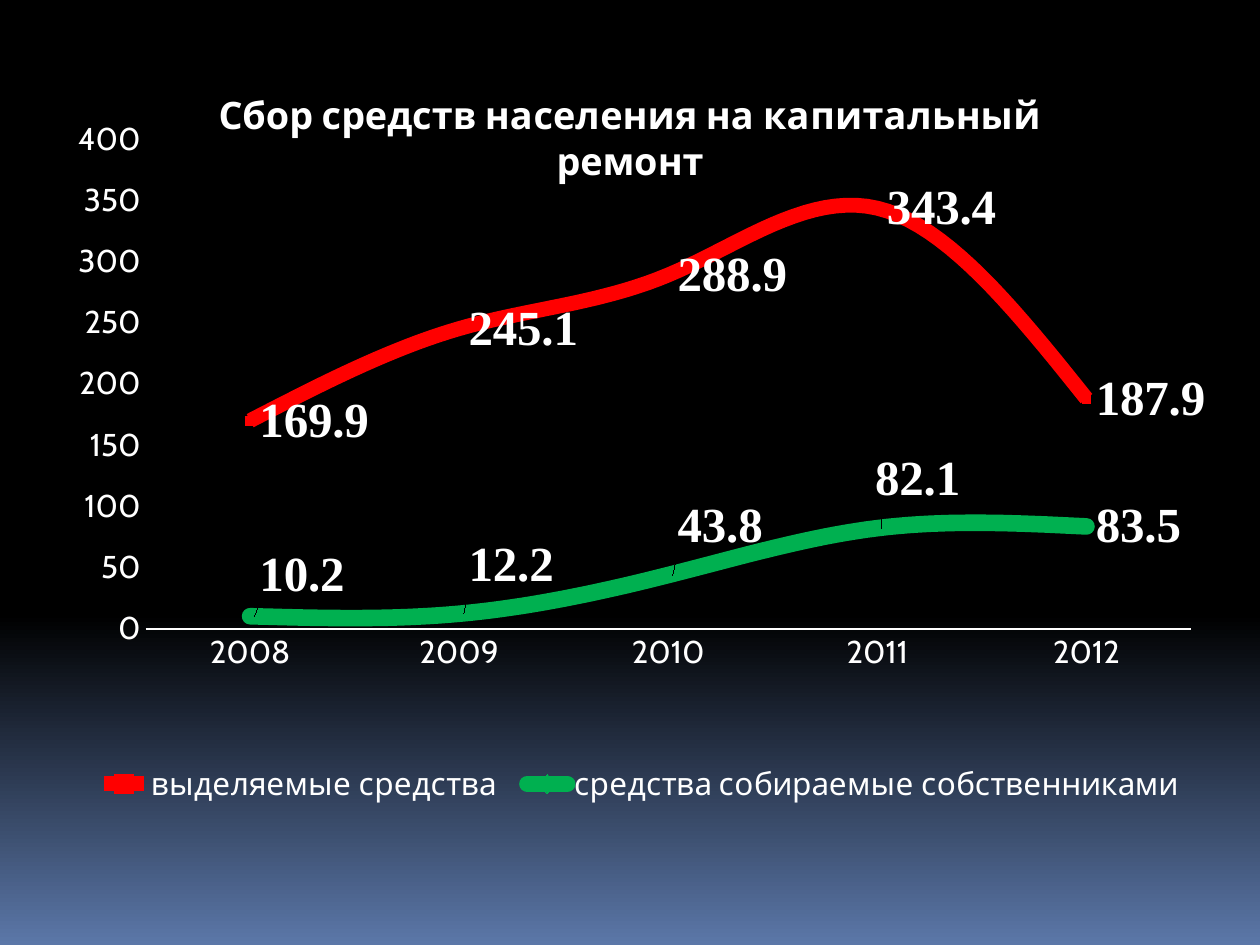
from dataclasses import dataclass

from lxml.etree import SubElement
from pptx import Presentation
from pptx.chart.data import CategoryChartData as ChartData
from pptx.dml.color import RGBColor as Rgb
from pptx.enum.chart import XL_CHART_TYPE as Kind
from pptx.enum.chart import XL_LABEL_POSITION as Side
from pptx.enum.chart import XL_LEGEND_POSITION as Place
from pptx.enum.chart import XL_TICK_MARK as Tick
from pptx.oxml.ns import qn
from pptx.util import Inches, Pt

COLORS = {
    "black": "000000",
    "blue": "5B77A8",
    "white": "FFFFFF",
    "red": "FF0000",
    "green": "00B050",
}
YEARS = ["2008", "2009", "2010", "2011", "2012"]
TITLE = "Сбор средств населения на капитальный ремонт"


@dataclass
class Fund:
    name: str
    values: tuple[float, ...]
    color: str
    width: float
    cap: str
    shifts: tuple[tuple[float, float], ...] = ()


FUNDS = [
    Fund("выделяемые средства", (169.9, 245.1, 288.9, 343.4, 187.9),
         "red", 8.5, "flat"),
    Fund("средства собираемые собственниками", (10.2, 12.2, 43.8, 82.1, 83.5),
         "green", 9.5, "rnd",
         ((0, -0.05), (0, -0.06), (0, -0.06), (-0.01, -0.06))),
]


def color(name: str) -> Rgb:
    return Rgb.from_string(COLORS[name])


def style(font, size: float = 18, bold: bool = False, name: str = "Cabin") -> None:
    font.size = Pt(size)
    font.bold = bold
    font.name = name
    font.color.rgb = color("white")


def add_title(frame, text: str, **form) -> None:
    run = frame.paragraphs[0].add_run()
    run.text = text
    style(run.font, **form)


def move(owner, after: str, **sizes: float) -> None:
    """Give a chart part a manual layout, in fractions of the chart."""
    for old in owner.findall(qn("c:layout")):
        owner.remove(old)
    layout = SubElement(owner, qn("c:layout"))
    manual = SubElement(layout, qn("c:manualLayout"))
    if after == "":
        owner.insert(0, layout)
        SubElement(manual, qn("c:layoutTarget")).set("val", "inner")
    else:
        owner.find(qn(after)).addnext(layout)
    if after != "c:idx":
        for axis in "xy":
            SubElement(manual, qn(f"c:{axis}Mode")).set("val", "edge")
    for key, value in sizes.items():
        SubElement(manual, qn(f"c:{key}")).set("val", str(value))


def style_line(line, fund: Fund) -> None:
    line.smooth = True
    line.marker.style = None
    line.format.line.color.rgb = color(fund.color)
    line.format.line.width = Pt(fund.width)
    line.format.line._get_or_add_ln().set("cap", fund.cap)
    form = {"size": 28, "bold": True, "name": "Times New Roman"}
    labels = line.data_labels
    labels.show_value = True
    labels.position = Side.RIGHT
    style(labels.font, **form)
    for i, (x, y) in enumerate(fund.shifts):
        label = line.points[i].data_label
        label.position = Side.RIGHT
        style(label.font, **form)
        spot = labels._element.xpath(f"c:dLbl[c:idx/@val='{i}']")[0]
        move(spot, "c:idx", x=x, y=y)


def add_funds(slide) -> None:
    data = ChartData()
    data.categories = YEARS
    for fund in FUNDS:
        data.add_series(fund.name, fund.values)
    chart = slide.shapes.add_chart(
        Kind.LINE, Inches(0.39), Inches(0.39), Inches(9.22), Inches(6.48), data
    ).chart
    style(chart.font)
    add_title(chart.chart_title.text_frame, TITLE, size=21.6, bold=True)
    move(chart.chart_title._element, "c:tx", x=0.14, y=0.04)

    years, sums = chart.category_axis, chart.value_axis
    for axis in (years, sums):
        axis.major_tick_mark = axis.minor_tick_mark = Tick.NONE
        axis.has_major_gridlines = False
    years.format.line.color.rgb = color("white")
    years.format.line.width = Pt(1)
    sums.format.line.fill.background()
    sums.minimum_scale, sums.maximum_scale, sums.major_unit = 0, 400, 50

    chart.has_legend = True
    chart.legend.position = Place.BOTTOM
    chart.legend.include_in_layout = False
    style(chart.legend.font)
    move(chart.legend._element, "c:legendPos", x=0.03, y=0.86, w=0.96, h=0.08)

    plot = chart.plots[0]
    plot.vary_by_categories = False
    move(chart._chartSpace.chart.plotArea, "", x=0.083, y=0.11, w=0.9, h=0.6)
    for line, fund in zip(plot.series, FUNDS):
        style_line(line, fund)


def fill_back(slide) -> None:
    fill = slide.background.fill
    fill.gradient()
    fill.gradient_angle = 270
    for stop, spot, name in zip(fill.gradient_stops, (0.65, 1), ("black", "blue")):
        stop.position = spot
        stop.color.rgb = color(name)


def main() -> None:
    deck = Presentation()
    deck.slide_width, deck.slide_height = Inches(10), Inches(7.5)
    slide = deck.slides.add_slide(deck.slide_layouts[6])
    fill_back(slide)
    add_funds(slide)
    deck.save("out.pptx")


if __name__ == "__main__":
    main()
